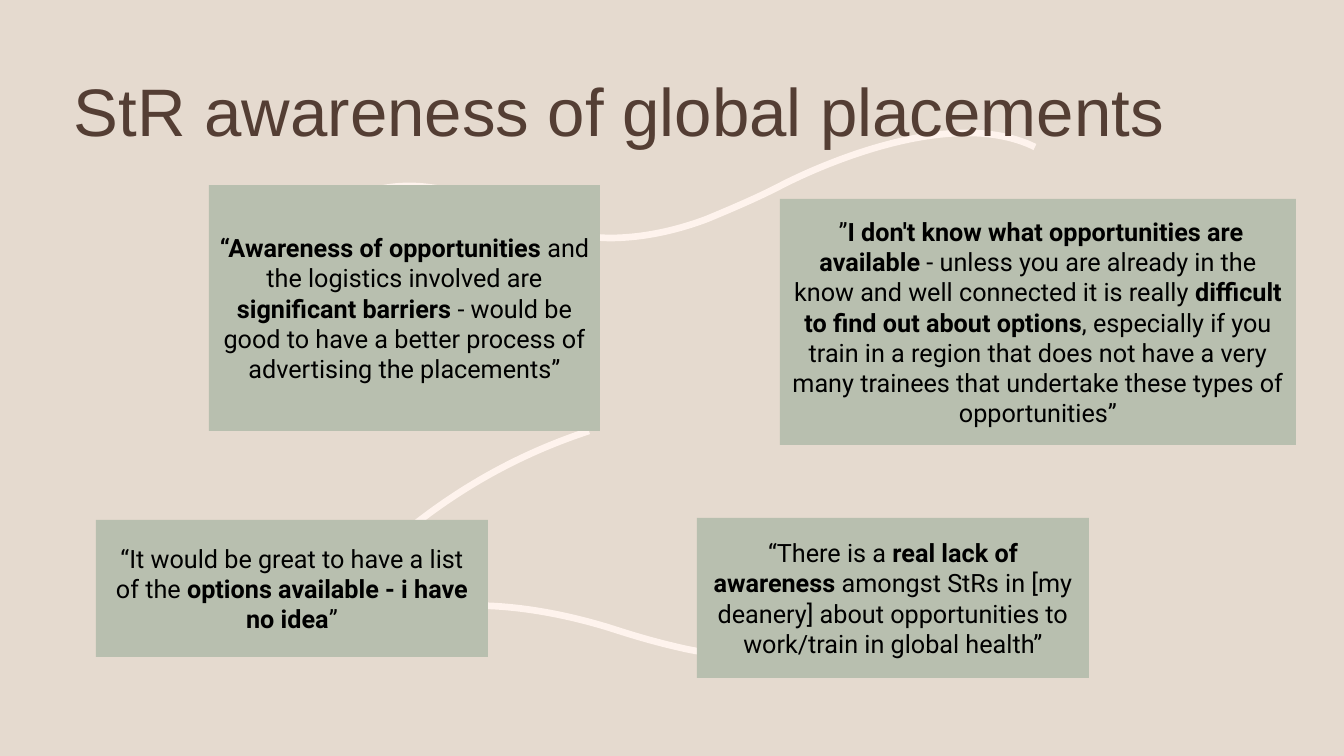
from lxml import etree
from pptx import Presentation
from pptx.dml.color import RGBColor
from pptx.enum.shapes import MSO_SHAPE
from pptx.enum.text import MSO_ANCHOR, PP_ALIGN
from pptx.oxml.ns import qn
from pptx.util import Pt

PX = 914400 / 100.8
RECTANGLE = MSO_SHAPE.RECTANGLE
MIDDLE = MSO_ANCHOR.MIDDLE
CENTER = PP_ALIGN.CENTER

SAND = RGBColor(0xE5, 0xDA, 0xCF)
CREAM = RGBColor(0xFE, 0xF3, 0xED)
SAGE = RGBColor(0xB8, 0xBF, 0xAF)
BROWN = RGBColor(0x54, 0x3E, 0x34)
BLACK = RGBColor(0, 0, 0)

RIBBONS = [
    ((589, 431), [((513, 456), (449, 494), (392, 543))]),
    ((309, 225), [
        ((353, 188), (401, 178), (453, 192)),
        ((470, 196), (485, 203), (501, 211)),
        ((534, 226), (569, 237), (609, 238)),
        ((642, 238), (675, 231), (707, 219)),
        ((743, 204), (763, 195), (784, 184)),
        ((808, 172), (948, 104), (1035, 147)),
    ]),
    ((927, 584), [
        ((911, 591), (898, 600), (884, 610)),
        ((855, 630), (821, 646), (784, 652)),
        ((752, 658), (720, 656), (686, 649)),
        ((650, 641), (629, 634), (607, 627)),
        ((583, 620), (437, 575), (350, 641)),
    ]),
]

TITLE = "StR awareness of global placements"
TITLE_BOX = (64, 77, 1159, 75)
BOLD_MARK = "*"
QUOTES = [
    ((780, 199, 516, 246),
     " ”*I don't know what opportunities are available *- unless you are already in the know "
     "and well connected it is really *difficult to find out about options*, especially if you "
     "train in a region that does not have a very many trainees that undertake these types of "
     "opportunities”"),
    ((209, 185, 391, 246),
     "*“Awareness of opportunities *and the logistics involved are *significant barriers* - "
     "would be good to have a better process of advertising the placements”"),
    ((697, 518, 392, 160),
     "“There is a *real lack of awareness *amongst StRs in [my deanery] about opportunities "
     "to work/train in global health”"),
    ((96, 520, 392, 137),
     "“It would be great to have a list of the *options available - i have no idea*”"),
]


def px(length):
    return round(length * PX)


def add_ribbon(page, start, curves):
    builder = page.shapes.build_freeform(*start, scale=PX)
    builder.add_line_segments([curve[-1] for curve in curves], close=False)
    ribbon = builder.convert_to_shape()
    ribbon.shadow.inherit = False
    ribbon.fill.background()
    ribbon.line.color.rgb = CREAM
    ribbon.line.width = Pt(4.75)
    left = min(start[0], *(curve[-1][0] for curve in curves))
    top = min(start[1], *(curve[-1][1] for curve in curves))
    segments = list(ribbon._element.iter(qn("a:lnTo")))
    for segment, curve in zip(segments, curves):
        bend = etree.Element(qn("a:cubicBezTo"))
        for x, y in curve:
            etree.SubElement(bend, qn("a:pt"), x=str(x - left), y=str(y - top))
        segment.getparent().replace(segment, bend)


def add_quote(page, bounds, text):
    box = page.shapes.add_shape(RECTANGLE, *map(px, bounds))
    box.shadow.inherit = False
    box.fill.solid()
    box.fill.fore_color.rgb = SAGE
    box.line.fill.background()
    frame = box.text_frame
    frame.word_wrap = True
    frame.vertical_anchor = MIDDLE
    para = frame.paragraphs[0]
    para.alignment = CENTER
    para.font.name = "Roboto"
    para.font.size = Pt(18)
    para.font.color.rgb = BLACK
    for index, words in enumerate(text.split(BOLD_MARK)):
        if words:
            span = para.add_run()
            span.text = words
            span.font.bold = index % 2 == 1


def add_title(page, bounds, text):
    frame = page.shapes.add_textbox(*map(px, bounds)).text_frame
    frame.word_wrap = True
    frame.vertical_anchor = MIDDLE
    para = frame.paragraphs[0]
    para.text = text
    para.line_spacing = 0.9
    para.font.name = "Arial"
    para.font.size = Pt(48)
    para.font.color.rgb = BROWN


def main():
    deck = Presentation()
    deck.slide_width = px(1344)
    deck.slide_height = px(756)
    page = deck.slides.add_slide(deck.slide_layouts[6])
    page.background.fill.solid()
    page.background.fill.fore_color.rgb = SAND
    for start, curves in RIBBONS:
        add_ribbon(page, start, curves)
    for bounds, text in QUOTES:
        add_quote(page, bounds, text)
    add_title(page, TITLE_BOX, TITLE)
    deck.save("out.pptx")


if __name__ == "__main__":
    main()
